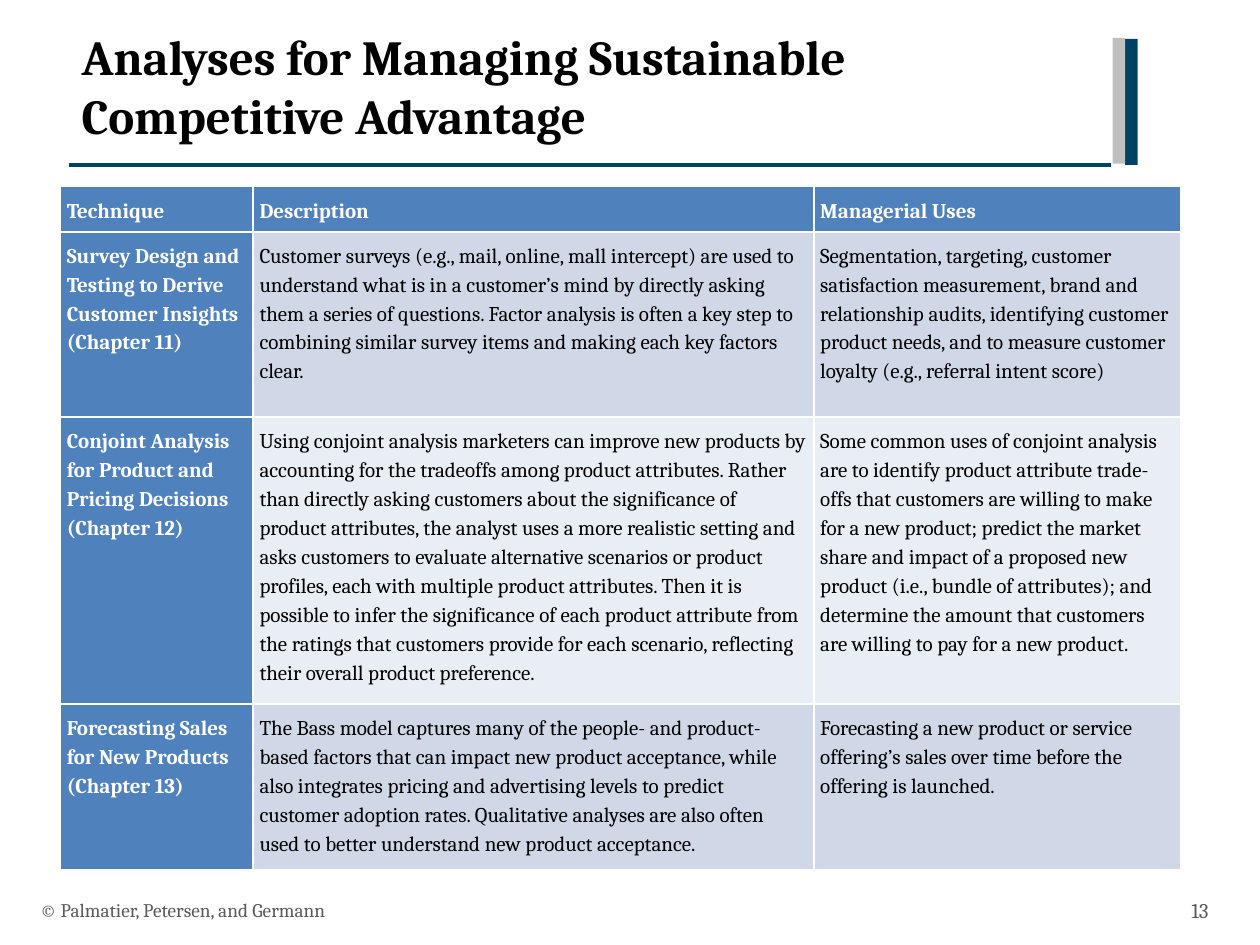
from pptx import Presentation
from pptx import util as u
from pptx.dml.color import RGBColor
from pptx.enum import shapes, text
from pptx.oxml import parse_xml
from pptx.oxml.ns import nsdecls
from pptx.util import Inches

COLORS = {
    "navy": "004264", "silver": "BFBFBF", "black": "000000", "white": "FFFFFF",
    "footer": "595959", "header": "4F81BD", "band_dark": "D0D8E8", "band_light": "E9EDF4",
}
FONT = "Cambria"
COLUMN_WIDTHS = [1.53, 4.45, 2.91]
ROW_HEIGHTS = [0.32, 1.47, 2.16, 1.16]
ROWS = [
    ["Technique", "Description", "Managerial Uses"],
    ["Survey Design and Testing to Derive Customer Insights (Chapter 11)",
     "Customer surveys (e.g., mail, online, mall intercept) are used to understand what is in a "
     "customer’s mind by directly asking them a series of questions. Factor analysis is often a "
     "key step to combining similar survey items and making each key factors clear.",
     "Segmentation, targeting, customer satisfaction measurement, brand and relationship audits, "
     "identifying customer product needs, and to measure customer loyalty "
     "(e.g., referral intent score)"],
    ["Conjoint Analysis for Product and Pricing Decisions (Chapter 12)",
     "Using conjoint analysis marketers can improve new products by accounting for the tradeoffs "
     "among product attributes. Rather than directly asking customers about the significance of "
     "product attributes, the analyst uses a more realistic setting and asks customers to "
     "evaluate alternative scenarios or product profiles, each with multiple product attributes. "
     "Then it is possible to infer the significance of each product attribute from the ratings "
     "that customers provide for each scenario, reflecting their overall product preference.",
     "Some common uses of conjoint analysis are to identify product attribute trade-offs that "
     "customers are willing to make for a new product; predict the market share and impact of a "
     "proposed new product (i.e., bundle of attributes); and determine the amount that customers "
     "are willing to pay for a new product."],
    ["Forecasting Sales for New Products (Chapter 13)",
     "The Bass model captures many of the people- and product-based factors that can impact new "
     "product acceptance, while also integrates pricing and advertising levels to predict "
     "customer adoption rates. Qualitative analyses are also often used to better understand new "
     "product acceptance.",
     "Forecasting a new product or service offering’s sales over time before the offering is "
     "launched."],
]


def rgb(name):
    return RGBColor.from_string(COLORS[name])


def write(para, words, size, color, bold=False):
    span = para.add_run()
    span.text = words
    for key, value in {"name": FONT, "size": u.Pt(size), "bold": bold}.items():
        setattr(span.font, key, value)
    span.font.color.rgb = rgb(color)


def add_text(page, left, top, width, height, words, size, color, bold=False,
             align=text.PP_ALIGN.LEFT):
    box = page.shapes.add_textbox(*map(Inches, (left, top, width, height)))
    frame = box.text_frame
    frame.word_wrap = True
    frame.vertical_anchor = text.MSO_ANCHOR.MIDDLE
    para = frame.paragraphs[0]
    para.alignment = align
    write(para, words, size, color, bold)


def add_heading(page, left, top, width, height):
    """Place the title, the rule under it and the two bars at its right."""
    rule_top = top + height + 0.12
    rule = page.shapes.add_connector(
        shapes.MSO_CONNECTOR.STRAIGHT,
        *map(Inches, (left, rule_top, left + width, rule_top)))
    rule.line.color.rgb = rgb("navy")
    rule.line.width = u.Pt(2)
    rule._element.spPr.append(parse_xml(f"<a:effectLst {nsdecls('a')}/>"))
    for offset, drop, color in ((0.11, 0.14, "navy"), (0.01, 0.13, "silver")):
        bar = page.shapes.add_shape(
            shapes.MSO_SHAPE.RECTANGLE,
            *map(Inches, (left + width + offset, top + drop, 0.1, 1)))
        bar.shadow.inherit = False
        bar.fill.solid()
        bar.fill.fore_color.rgb = rgb(color)
        bar.line.fill.background()
    add_text(page, left, top, width, height,
             "Analyses for Managing Sustainable Competitive Advantage", 28, "black", True)


def add_techniques(page, left, top):
    """Place the table; its default style draws the white borders."""
    frame = page.shapes.add_table(
        len(ROWS), len(COLUMN_WIDTHS), Inches(left), Inches(top),
        Inches(sum(COLUMN_WIDTHS)), Inches(sum(ROW_HEIGHTS)))
    table = frame.table
    table.first_col = True
    for column, width in zip(table.columns, COLUMN_WIDTHS):
        column.width = Inches(width)
    for row, height in zip(table.rows, ROW_HEIGHTS):
        row.height = Inches(height)
    margins = {"margin_left": 0.05, "margin_right": 0.05,
               "margin_top": 0.06, "margin_bottom": 0.06}
    for r, row in enumerate(ROWS):
        for c, words in enumerate(row):
            cell = table.cell(r, c)
            for key, value in margins.items():
                setattr(cell, key, Inches(value))
            cell.vertical_anchor = text.MSO_ANCHOR.TOP if r else text.MSO_ANCHOR.MIDDLE
            label = r == 0 or c == 0
            cell.fill.solid()
            cell.fill.fore_color.rgb = rgb(
                "header" if label else "band_dark" if r % 2 else "band_light")
            para = cell.text_frame.paragraphs[0]
            para.line_spacing = 1.2
            write(para, words, 12, "white" if label else "black", label)


def add_footer(page, left, top, width, height):
    number_width = 0.61
    add_text(page, left, top, 6.7, height, "© Palmatier, Petersen, and Germann", 11, "footer")
    add_text(page, left + width - number_width, top, number_width, height, "13", 12, "footer",
             align=text.PP_ALIGN.RIGHT)


def main():
    deck = Presentation()
    deck.slide_width, deck.slide_height = Inches(10), Inches(7.5)
    page = deck.slides.add_slide(deck.slide_layouts[6])
    add_heading(page, 0.55, 0.17, 8.27, 1.02)
    add_techniques(page, 0.48, 1.48)
    add_footer(page, 0.22, 7.02, 9.47, 0.4)
    deck.save("out.pptx")


if __name__ == "__main__":
    main()
